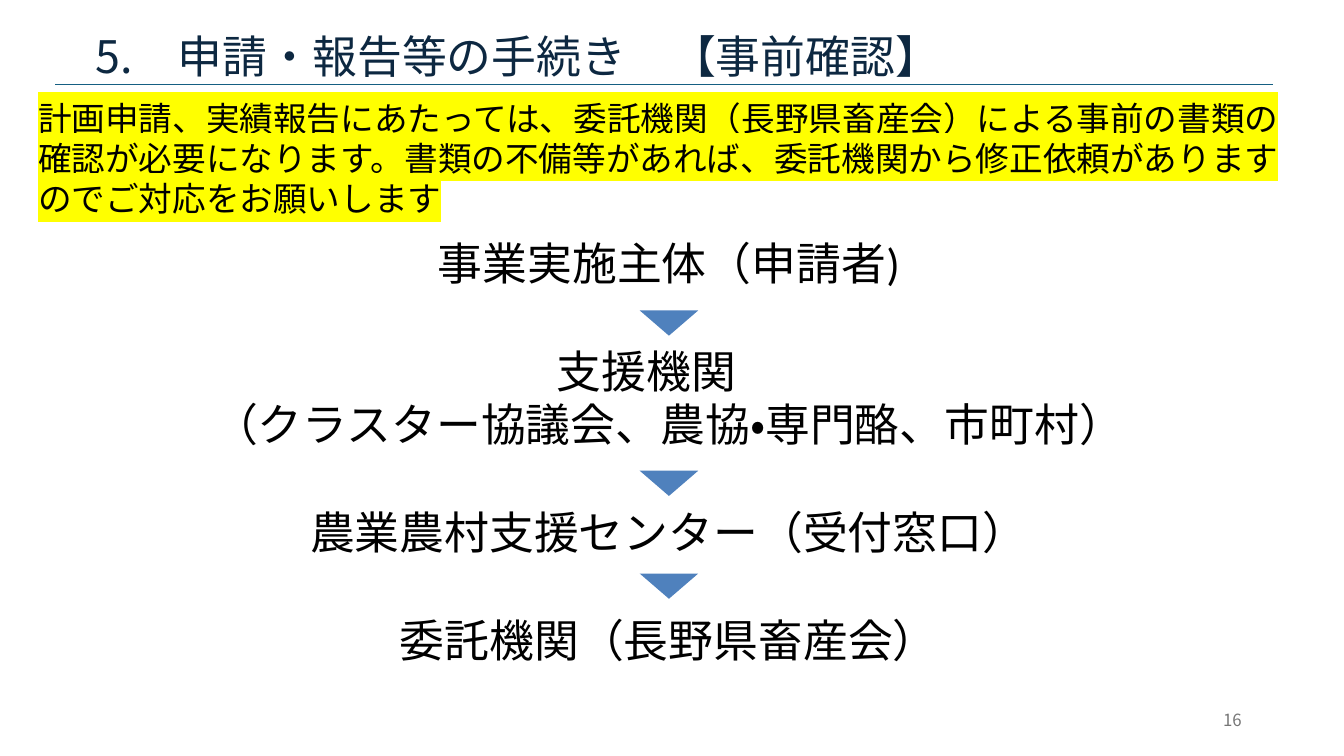
import pptx
import pptx.dml.color
import pptx.enum.lang
import pptx.enum.shapes
import pptx.enum.text
import pptx.oxml
import pptx.oxml.ns
import pptx.util

Inches = pptx.util.Inches
Pt = pptx.util.Pt
RGBColor = pptx.dml.color.RGBColor

NAVY = RGBColor(0x0D, 0x28, 0x41)
RULE_BLUE = RGBColor(0x15, 0x5F, 0x82)
ARROW_BLUE = RGBColor(0x4F, 0x81, 0xBD)
GREY = RGBColor(0x76, 0x76, 0x76)
BLACK = RGBColor(0, 0, 0)
YELLOW = RGBColor(0xFF, 0xFF, 0x00)

HEADING_FONT = "Noto Sans CJK JP"
BODY_FONT = "Calibri"
FLOW_SIZE = 32
FLOW_LINE = 1.2 * FLOW_SIZE

FLOW_STEPS = [
    ["事業実施主体（申請者)"],
    ["支援機関　", "（クラスター協議会、農協・専門酪、市町村）"],
    ["農業農村支援センター（受付窓口）"],
    ["委託機関（長野県畜産会）"],
]
ARROW_OFFSETS = [0.79, 2.38, 3.4]


def add_box(slide, left, top, width, height, margins=None):
    box = slide.shapes.add_textbox(
        Inches(left), Inches(top), Inches(width), Inches(height))
    tf = box.text_frame
    tf.word_wrap = True
    if margins is not None:
        tf.margin_left = tf.margin_right = Inches(margins)
        tf.margin_top = tf.margin_bottom = Inches(margins)
    return tf


def add_run(p, text, size, color, font):
    r = p.add_run()
    r.text = text
    r.font.size = Pt(size)
    r.font.name = font
    r.font.color.rgb = color
    r.font.language_id = pptx.enum.lang.MSO_LANGUAGE_ID.JAPANESE
    if font == HEADING_FONT:
        ea = pptx.oxml.parse_xml(
            f'<a:ea {pptx.oxml.ns.nsdecls("a")} typeface="{font}"/>')
        r.font._element.append(ea)
    return r


def highlight(r, color):
    mark = pptx.oxml.parse_xml(
        f'<a:highlight {pptx.oxml.ns.nsdecls("a")}>'
        f'<a:srgbClr val="{color}"/></a:highlight>')
    r.font._element.find(pptx.oxml.ns.qn("a:solidFill")).addnext(mark)


def add_header(slide, left, top, width, height):
    tf = add_box(slide, left + 0.39, top, 10.56, height, margins=0)
    tf.margin_left = Inches(0.01)
    tf.margin_top = Inches(0.02)
    add_run(tf.paragraphs[0], "5.　申請・報告等の手続き　【事前確認】",
            32, NAVY, HEADING_FONT)
    y = Inches(top + height + 0.03)
    rule = slide.shapes.add_connector(
        pptx.enum.shapes.MSO_CONNECTOR.STRAIGHT,
        Inches(left), y, Inches(left + width), y)
    rule.line.color.rgb = RULE_BLUE
    rule.line.width = Pt(1)
    rule._element.spPr.append(pptx.oxml.parse_xml(
        f'<a:effectLst {pptx.oxml.ns.nsdecls("a")}/>'))


def add_notice(slide, left, top, width, height):
    tf = add_box(slide, left, top, width, height)
    r = add_run(
        tf.paragraphs[0],
        "計画申請、実績報告にあたっては、委託機関（長野県畜産会）による事前の書類の"
        "確認が必要になります。書類の不備等があれば、委託機関から修正依頼があります"
        "のでご対応をお願いします", 24, BLACK, BODY_FONT)
    highlight(r, YELLOW)


def add_flow(slide, left, top, width, height):
    tf = add_box(slide, left, top, width, height)
    for i, step in enumerate(FLOW_STEPS):
        for j, line in enumerate(step):
            first = i == 0 and j == 0
            p = tf.paragraphs[0] if first else tf.add_paragraph()
            p.alignment = pptx.enum.text.PP_ALIGN.CENTER
            if i > 0 and j == 0:
                p.space_before = Pt(FLOW_LINE)
            add_run(p, line, FLOW_SIZE, BLACK, BODY_FONT)
    arrow_width, arrow_height = 0.58, 0.25
    for offset in ARROW_OFFSETS:
        sp = slide.shapes.add_shape(
            pptx.enum.shapes.MSO_SHAPE.FLOWCHART_MERGE,
            Inches(left + (width - arrow_width) / 2), Inches(top + offset),
            Inches(arrow_width), Inches(arrow_height))
        sp.shadow.inherit = False
        sp.fill.solid()
        sp.fill.fore_color.rgb = ARROW_BLUE
        sp.line.fill.background()


def add_page_number(slide, left, top, width, height):
    tf = add_box(slide, left, top, width, height, margins=0)
    p = tf.paragraphs[0]
    p.line_spacing = Pt(13.9)
    tf.margin_left = Inches(0.04)
    add_run(p, "16", 12, GREY, HEADING_FONT)


def main():
    prs = pptx.Presentation()
    prs.slide_width = Inches(13.33)
    prs.slide_height = Inches(7.5)
    s = prs.slides.add_slide(prs.slide_layouts[6])
    add_header(s, 0.55, 0.26, 12.08, 0.55)
    add_notice(s, 0.28, 0.92, 12.54, 1.31)
    add_flow(s, 0.45, 2.29, 12.37, 4.41)
    add_page_number(s, 12.09, 7.05, 0.27, 0.21)
    prs.save("out.pptx")


if __name__ == "__main__":
    main()
